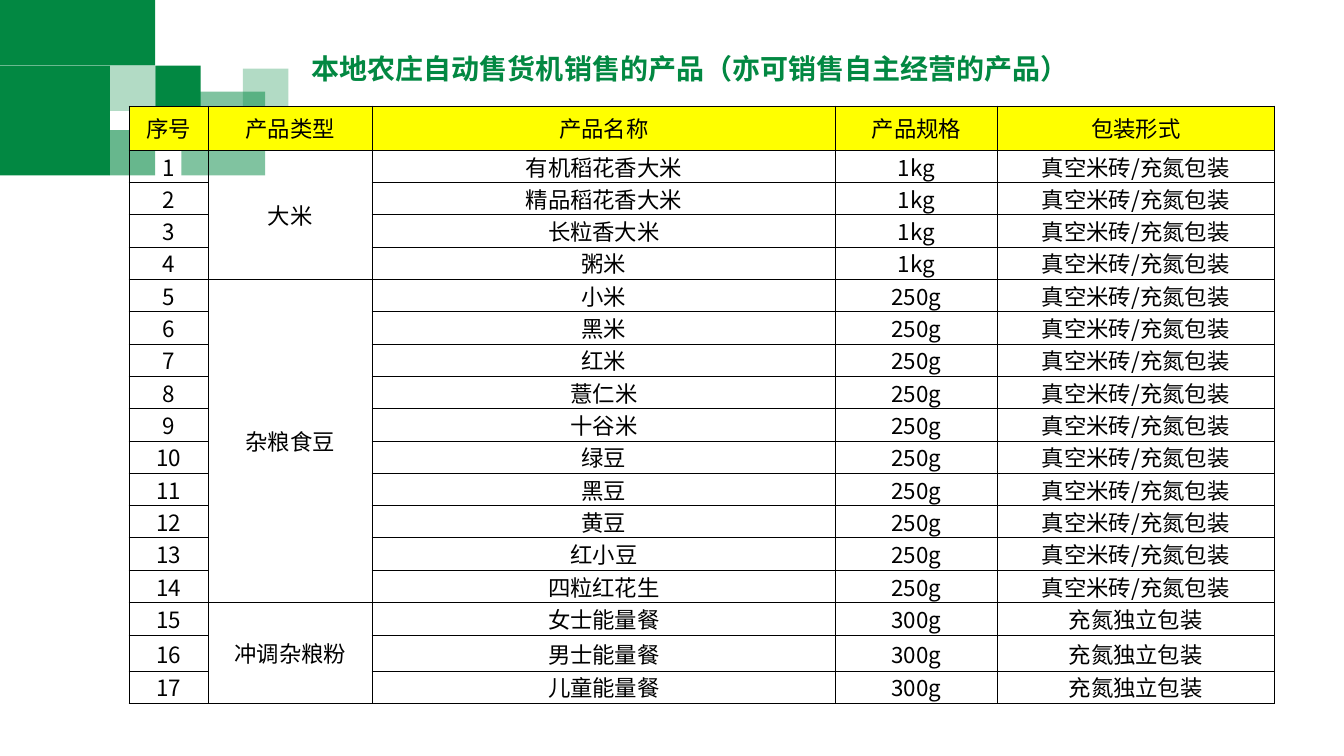
"""Build the slide that lists the products sold in the vending machines."""
from itertools import product

from lxml.etree import SubElement
from pptx import Presentation
from pptx.dml.color import RGBColor
from pptx.enum.shapes import MSO_SHAPE
from pptx.enum.text import MSO_ANCHOR, MSO_AUTO_SIZE, PP_ALIGN
from pptx.oxml.ns import qn
from pptx.util import Inches, Pt

GREEN, YELLOW, BLACK = "028842", "FFFF00", "000000"


def paint(fill, colour, opacity=100):
    fill.solid()
    fill.fore_color.rgb = RGBColor.from_string(colour)
    if opacity < 100:
        for tint in fill._xPr.iter(qn("a:srgbClr")):
            SubElement(tint, qn("a:alpha"), val=str(opacity * 1000))


def apply_format(target, values):
    for attribute, value in values.items():
        setattr(target, attribute, value)


deck = Presentation()
deck.slide_width, deck.slide_height = Inches(13.33), Inches(7.5)
slide = deck.slides.add_slide(deck.slide_layouts[5])

corner_blocks = [
    (0, 0.65, 1.09, 1.09, 100),
    (0, 0, 1.54, 0.65, 100),
    (1.09, 0.65, 0.45, 0.45, 30),
    (1.54, 0.65, 0.45, 0.45, 100),
    (1.09, 1.29, 0.45, 0.45, 60),
    (1.8, 0.91, 0.83, 0.83, 50),
    (2.41, 0.68, 0.45, 0.45, 30),
]
for *place, opacity in corner_blocks:
    block = slide.shapes.add_shape(MSO_SHAPE.RECTANGLE, *map(Inches, place))
    block.shadow.inherit = False
    block.line.fill.background()
    paint(block.fill, GREEN, opacity)

heading = slide.shapes.title
apply_format(heading, {"left": Inches(2.99), "top": Inches(0.5),
                       "width": Inches(10.24), "height": Inches(0.6)})
apply_format(heading.text_frame, {
    "text": "本地农庄自动售货机销售的产品（亦可销售自主经营的产品）",
    "vertical_anchor": MSO_ANCHOR.TOP, "auto_size": MSO_AUTO_SIZE.NONE, "word_wrap": True})
heading_line = heading.text_frame.paragraphs[0]
apply_format(heading_line, {"alignment": PP_ALIGN.LEFT, "line_spacing": 0.9,
                            "space_before": Pt(10)})
heading_font = heading_line.runs[0].font
apply_format(heading_font, {"name": "Calibri", "size": Pt(20), "bold": True})
paint(heading_font.fill, GREEN)

column_titles = ["序号", "产品类型", "产品名称", "产品规格", "包装形式"]
vacuum, nitrogen = "真空米砖/充氮包装", "充氮独立包装"
categories = [
    ("大米", "1kg", vacuum, ["有机稻花香大米", "精品稻花香大米", "长粒香大米", "粥米"]),
    ("杂粮食豆", "250g", vacuum, ["小米", "黑米", "红米", "薏仁米", "十谷米", "绿豆",
                              "黑豆", "黄豆", "红小豆", "四粒红花生"]),
    ("冲调杂粮粉", "300g", nitrogen, ["女士能量餐", "男士能量餐", "儿童能量餐"]),
]
column_widths = [0.79, 1.62, 4.6, 1.6, 2.75]
row_heights = [0.44] + [0.27] * 14 + [0.33, 0.35, 0.27]

products = slide.shapes.add_table(
    len(row_heights), len(column_widths),
    Inches(1.28), Inches(1.05), Inches(11.35), Inches(5.4)).table
apply_format(products, {"first_row": False, "horz_banding": False})
for column, width in zip(products.columns, column_widths):
    column.width = Inches(width)
for row, height in zip(products.rows, row_heights):
    row.height = Inches(height)

entries = [column_titles]
for category, weight, packaging, names in categories:
    first = len(entries)
    for name in names:
        label = category if name == names[0] else ""
        entries.append([str(len(entries)), label, name, weight, packaging])
    products.cell(first, 1).merge(products.cell(len(entries) - 1, 1))

cell_format = {"vertical_anchor": MSO_ANCHOR.MIDDLE, "margin_left": 0, "margin_right": 0,
               "margin_top": 0, "margin_bottom": 0}
cell_font = {"name": "Noto Sans CJK SC", "size": Pt(16), "bold": False}
for row, column in product(range(len(row_heights)), range(len(column_widths))):
    cell = products.cell(row, column)
    apply_format(cell, cell_format)
    properties = cell._tc.get_or_add_tcPr()
    for side in ("lnL", "lnR", "lnT", "lnB"):
        border = SubElement(properties, qn(f"a:{side}"), w=str(Pt(0.5)))
        SubElement(SubElement(border, qn("a:solidFill")), qn("a:srgbClr"), val=BLACK)
    if row == 0:
        paint(cell.fill, YELLOW)
    else:
        cell.fill.background()
    line = cell.text_frame.paragraphs[0]
    line.alignment = PP_ALIGN.CENTER
    apply_format(line.font, cell_font)
    if entries[row][column]:
        run = line.add_run()
        run.text = entries[row][column]
        apply_format(run.font, cell_font)
        paint(run.font.fill, BLACK)
        SubElement(run.font._element, qn("a:ea"), typeface=cell_font["name"])

deck.save("out.pptx")
